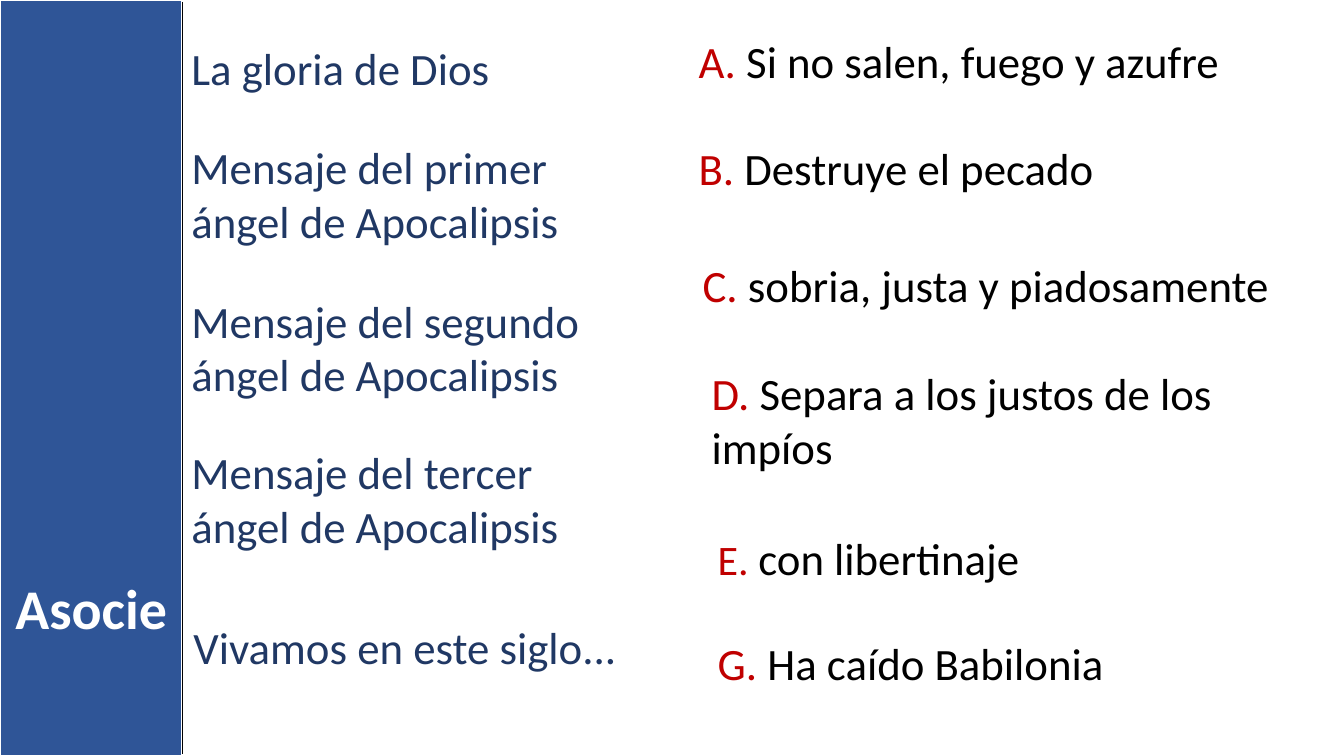
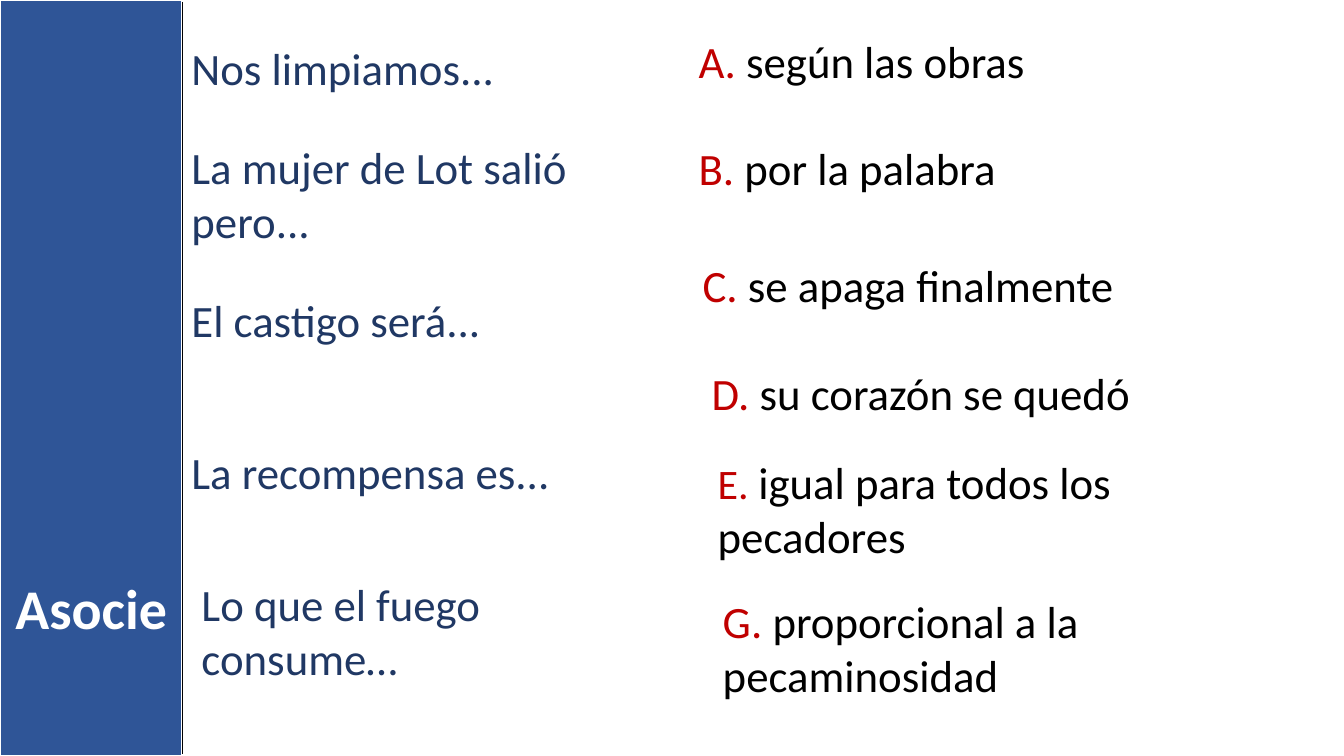
import pptx
import pptx.util
import pptx.dml.color
import pptx.enum.shapes
import pptx.enum.text
import lxml.etree
from pptx.util import Inches

FONT = "Calibri"
BAND, NAVY, RED, BLACK, WHITE = "2F5597", "203864", "C00000", "000000", "FFFFFF"
WIDTH, HEIGHT, BAND_WIDTH = 13.33, 7.5, 1.81
LINE_HEIGHT, PADDING = 0.54, 0.1
PROMPT_WIDTH, ANSWER_WIDTH = 4.62, 6.04

SLIDES = [
    {
        "prompts": [
            (1.8, 0.35, 1, "La gloria de Dios"),
            (1.8, 1.34, 2, "Mensaje del primer ángel de Apocalipsis"),
            (1.8, 2.86, 2, "Mensaje del segundo ángel de Apocalipsis"),
            (1.8, 4.36, 2, "Mensaje del tercer ángel de Apocalipsis"),
            (1.82, 6.1, 1, "Vivamos en este siglo..."),
        ],
        "answers": [
            (6.83, 0.29, 1, "A. ", "Si no salen, fuego y azufre"),
            (6.83, 1.35, 1, "B. ", "Destruye el pecado"),
            (6.87, 2.51, 1, "C. ", "sobria, justa y piadosamente"),
            (6.96, 3.58, 2, "D. ", "Separa a los justos de los impíos"),
            (7.02, 5.22, 1, "E. ", "con libertinaje"),
            (7.02, 6.26, 1, "G. ", "Ha caído Babilonia"),
        ],
    },
    {
        "prompts": [
            (1.8, 0.35, 1, "Nos limpiamos..."),
            (1.8, 1.34, 2, "La mujer de Lot salió pero..."),
            (1.8, 2.86, 1, "El castigo será..."),
            (1.8, 4.36, 1, "La recompensa es..."),
            (1.9, 5.67, 2, "Lo que el fuego consume…"),
        ],
        "answers": [
            (6.83, 0.29, 1, "A. ", "según las obras"),
            (6.83, 1.35, 1, "B. ", "por la palabra"),
            (6.87, 2.51, 1, "C. ", "se apaga finalmente"),
            (6.96, 3.58, 1, "D. ", "su corazón se quedó"),
            (7.02, 4.46, 2, "E. ", "igual para todos los pecadores"),
            (7.07, 5.84, 2, "G. ", "proporcional a la pecaminosidad"),
        ],
    },
]


def rgb(color):
    """Turn a hex string into a colour."""
    return pptx.dml.color.RGBColor.from_string(color)


def style_run(r, color, size=32, bold=False):
    """Set the font of one run."""
    r.font.name = FONT
    r.font.size = pptx.util.Pt(size)
    r.font.bold = bold
    r.font.color.rgb = rgb(color)


def add_text(s, x, y, w, lines, parts):
    """Add a text box made of (text, colour, size) runs."""
    height = lines * LINE_HEIGHT + PADDING
    sp = s.shapes.add_textbox(Inches(x), Inches(y), Inches(w), Inches(height))
    tf = sp.text_frame
    tf.word_wrap = True
    tf.auto_size = pptx.enum.text.MSO_AUTO_SIZE.SHAPE_TO_FIT_TEXT
    for text, color, size in parts:
        r = tf.paragraphs[0].add_run()
        r.text = text
        style_run(r, color, size)


def add_band(s, x, y, w, h):
    """Draw the side band with its title and its edge line."""
    band = s.shapes.add_shape(pptx.enum.shapes.MSO_SHAPE.RECTANGLE,
                              Inches(x), Inches(y), Inches(w), Inches(h))
    band.shadow.inherit = False
    band.fill.solid()
    band.fill.fore_color.rgb = rgb(BAND)
    band.line.color.rgb = rgb(WHITE)
    band.line.width = pptx.util.Pt(1.5)

    title = s.shapes.title
    band._element.addnext(title._element)
    title.left, title.top = Inches(x), Inches(y + 5.64)
    title.width, title.height = Inches(w), Inches(0.77)
    tf = title.text_frame
    tf.text = "Asocie"
    tf.word_wrap = True
    tf.auto_size = pptx.enum.text.MSO_AUTO_SIZE.NONE
    tf.vertical_anchor = pptx.enum.text.MSO_ANCHOR.TOP
    p = tf.paragraphs[0]
    p.alignment = pptx.enum.text.PP_ALIGN.CENTER
    style_run(p.runs[0], WHITE, 40, True)

    edge = s.shapes.add_connector(pptx.enum.shapes.MSO_CONNECTOR.STRAIGHT,
                                  Inches(x + w), Inches(y + 0.02),
                                  Inches(x + w), Inches(y + h - 0.02))
    edge.line.color.rgb = rgb(BLACK)
    edge.line.width = pptx.util.Pt(1)
    lxml.etree.SubElement(edge._element.spPr, pptx.oxml.ns.qn("a:effectLst"))


def add_matching_slide(prs, prompts, answers):
    """Add a slide that pairs prompts with lettered answers."""
    s = prs.slides.add_slide(prs.slide_layouts[5])
    add_band(s, 0, 0, BAND_WIDTH, HEIGHT)
    for x, y, lines, text in prompts:
        add_text(s, x, y, PROMPT_WIDTH, lines, [(text, NAVY, 32)])
    for x, y, lines, letter, text in answers:
        letter_size = 30 if letter == "E. " else 32
        add_text(s, x, y, ANSWER_WIDTH, lines,
                 [(letter, RED, letter_size), (text, BLACK, 32)])


def main():
    """Build and save the presentation."""
    prs = pptx.Presentation()
    prs.slide_width, prs.slide_height = Inches(WIDTH), Inches(HEIGHT)
    for content in SLIDES:
        add_matching_slide(prs, **content)
    prs.save("out.pptx")


if __name__ == "__main__":
    main()
